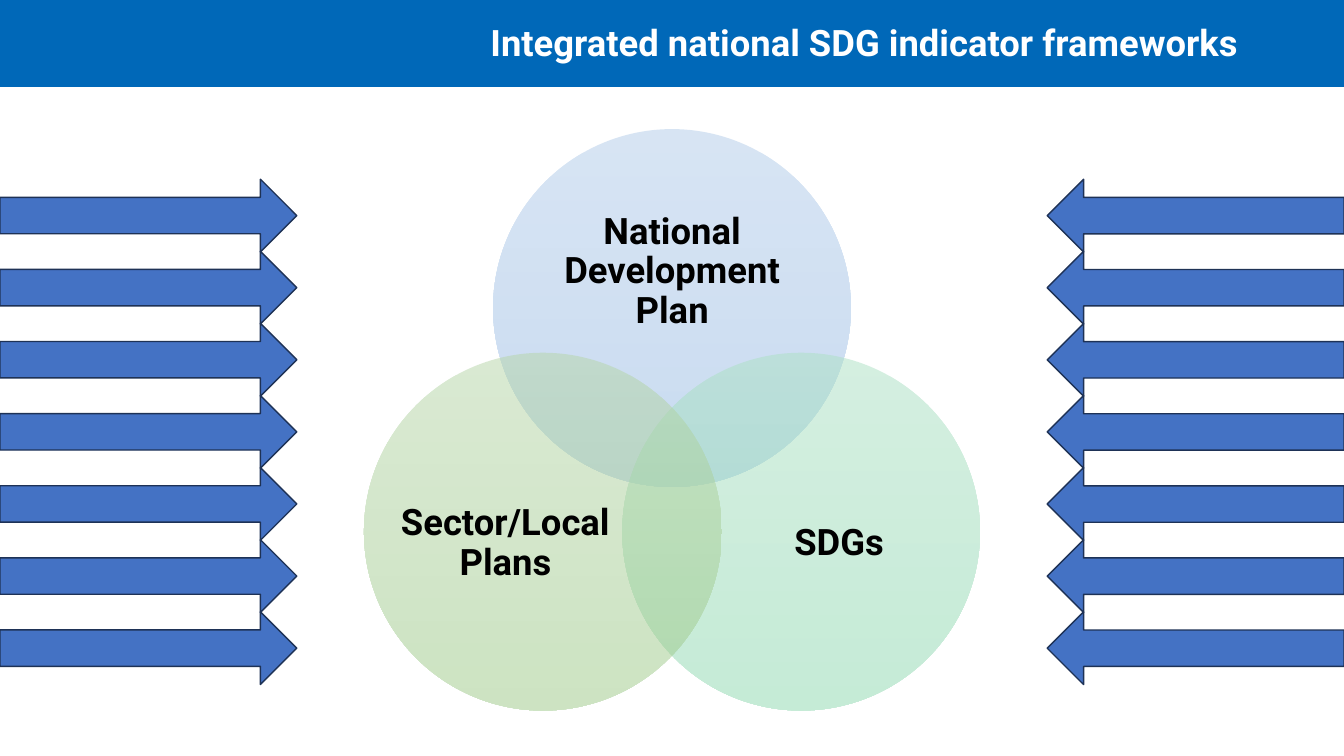
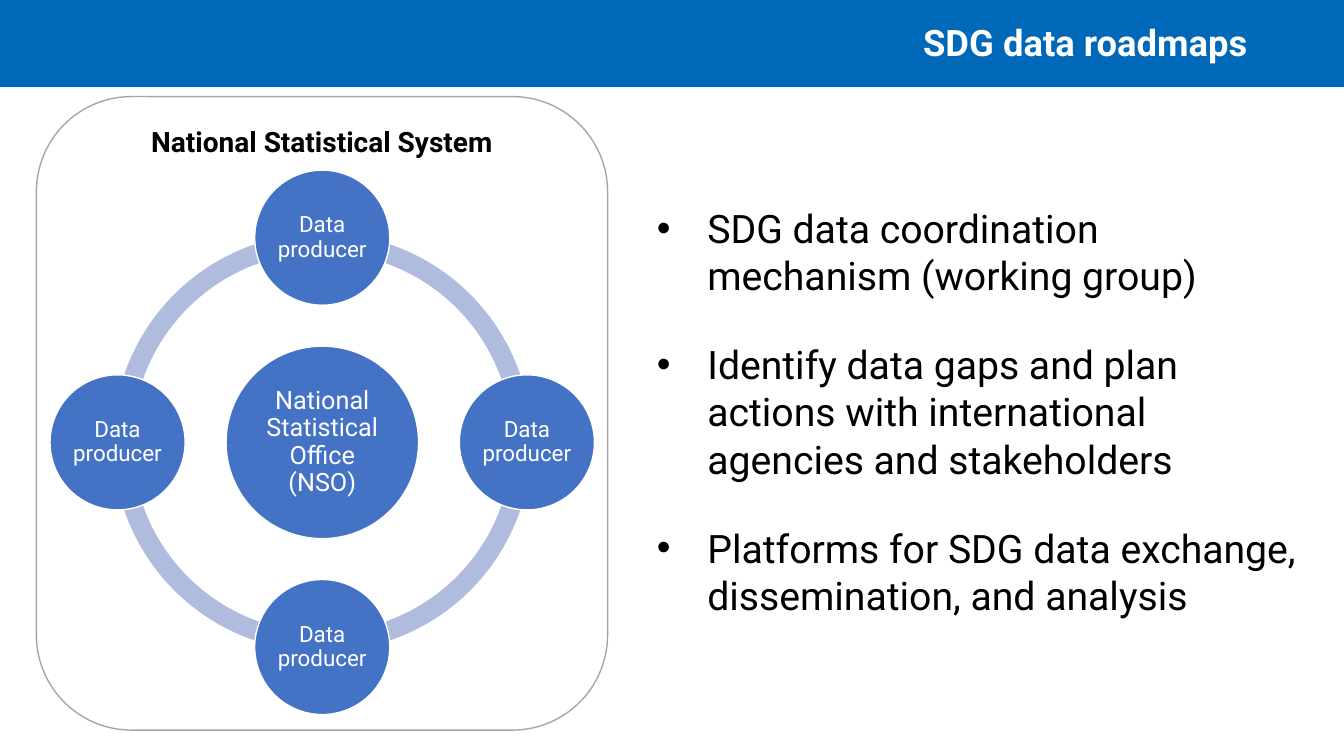
from dataclasses import dataclass
from math import cos, radians, sin

from lxml.etree import SubElement
from pptx import Presentation
from pptx.dml.color import RGBColor
from pptx.enum.shapes import MSO_SHAPE
from pptx.enum.text import MSO_ANCHOR, PP_ALIGN
from pptx.oxml.ns import qn
from pptx.shapes.autoshape import Shape
from pptx.slide import Slide
from pptx.text.text import TextFrame
from pptx.util import Pt


@dataclass(frozen=True)
class Theme:
    font: str = "Roboto"
    band: str = "0068B8"
    accent: str = "4472C4"
    arrow_edge: str = "1E3256"
    ring: str = "B0BCDE"
    frame_edge: str = "A6A6A6"
    white: str = "FFFFFF"
    black: str = "000000"
    title_size: int = 26
    heading_size: int = 20
    bullet_size: int = 28
    office_size: int = 18
    producer_size: int = 16


THEME = Theme()
PAGE_WIDTH, PAGE_HEIGHT = 960, 540


@dataclass(frozen=True)
class Box:
    left: float
    top: float
    width: float
    height: float

    @classmethod
    def around(cls, x: float, y: float, size: float) -> "Box":
        return cls(x - size / 2, y - size / 2, size, size)

    def lengths(self) -> tuple[Pt, Pt, Pt, Pt]:
        return Pt(self.left), Pt(self.top), Pt(self.width), Pt(self.height)


@dataclass(frozen=True)
class Style:
    size: int
    color: str = THEME.black
    bold: bool = False
    align: PP_ALIGN = PP_ALIGN.CENTER
    spacing: float = 1.0


TITLE = Style(THEME.title_size, THEME.white, True, PP_ALIGN.RIGHT, 0.8)
PLAN_LABEL = Style(THEME.title_size, bold=True, spacing=0.9)
HEADING = Style(THEME.heading_size, bold=True)
OFFICE = Style(THEME.office_size, THEME.white, spacing=0.9)
PRODUCER = Style(THEME.producer_size, THEME.white, spacing=0.9)
BULLET = Style(THEME.bullet_size, align=PP_ALIGN.LEFT)


@dataclass(frozen=True)
class Plan:
    text: str
    angle: float
    top_color: str
    bottom_color: str
    label: Box


PLANS = (
    Plan("National Development Plan", -90, "B1CBE9", "93B9E4", Box(386.6, 136.8, 187.2, 115.2)),
    Plan("SDGs", 30, "ABE0C3", "8CD8AF", Box(522.7, 318.2, 153.4, 140.4)),
    Plan("Sector/Local Plans", 150, "B5D5A7", "9CC987", Box(284.4, 318.2, 153.4, 140.4)),
)
ROADMAP_POINTS = (
    "SDG data coordination mechanism (working group)",
    "Identify data gaps and plan actions with international agencies and stakeholders",
    "Platforms for SDG data exchange, dissemination, and analysis",
)


# Shared drawing functions
def add_figure(page: Slide, kind: MSO_SHAPE, box: Box, fill: str, line: str | None = None) -> Shape:
    figure = page.shapes.add_shape(kind, *box.lengths())
    figure.shadow.inherit = False
    figure.fill.solid()
    figure.fill.fore_color.rgb = RGBColor.from_string(fill)
    if line:
        figure.line.color.rgb = RGBColor.from_string(line)
        figure.line.width = Pt(1)
    else:
        figure.line.fill.background()
    return figure


def set_margins(frame: TextFrame, sides: float, top: float, bottom: float) -> None:
    frame.margin_left = frame.margin_right = Pt(sides)
    frame.margin_top, frame.margin_bottom = Pt(top), Pt(bottom)


def write(frame: TextFrame, texts: tuple[str, ...], style: Style,
          anchor: MSO_ANCHOR = MSO_ANCHOR.MIDDLE, bulleted: bool = False) -> None:
    frame.word_wrap = True
    frame.vertical_anchor = anchor
    for index, text in enumerate(texts):
        para = frame.add_paragraph() if index else frame.paragraphs[0]
        if bulleted:
            add_bullet(para)
        para.alignment = style.align
        para.line_spacing = style.spacing
        span = para.add_run()
        span.text = text
        span.font.name = THEME.font
        span.font.size = Pt(style.size)
        span.font.bold = style.bold
        span.font.color.rgb = RGBColor.from_string(style.color)


def add_bullet(para) -> None:
    para.space_after = Pt(30)
    properties = para._p.get_or_add_pPr()
    properties.set("marL", str(Pt(36)))
    properties.set("indent", str(-Pt(36)))
    SubElement(properties, qn("a:buFont")).set("typeface", "Arial")
    SubElement(properties, qn("a:buChar")).set("char", "•")


def add_text(page: Slide, box: Box) -> TextFrame:
    return page.shapes.add_textbox(*box.lengths()).text_frame


def add_page(deck, title: str) -> Slide:
    page = deck.slides.add_slide(deck.slide_layouts[6])
    add_figure(page, MSO_SHAPE.RECTANGLE, Box(0, 0, PAGE_WIDTH, 62), THEME.band)
    write(add_text(page, Box(260, 16.6, 638.5, 34)), (title,), TITLE, MSO_ANCHOR.TOP)
    return page


# Slide 1: overlapping plans between two columns of arrows
def add_plan(page: Slide, plan: Plan) -> None:
    center_x, center_y, orbit, diameter = 480, 326.5, 106.5, 255.6
    angle = radians(plan.angle)
    box = Box.around(center_x + orbit * cos(angle), center_y + orbit * sin(angle), diameter)
    circle = add_figure(page, MSO_SHAPE.OVAL, box, plan.top_color)
    circle.fill.gradient()
    circle.fill.gradient_angle = 270
    for stop, color in zip(circle.fill.gradient_stops, (plan.top_color, plan.bottom_color)):
        stop.color.rgb = RGBColor.from_string(color)
    for color in circle.element.spPr.iter(qn("a:srgbClr")):
        SubElement(color, qn("a:alpha")).set("val", "50000")
    label = add_text(page, plan.label)
    set_margins(label, 0, 0, 0)
    write(label, (plan.text,), PLAN_LABEL)


def draw_frameworks(deck) -> None:
    page = add_page(deck, "Integrated national SDG indicator frameworks ")
    for plan in PLANS:
        add_plan(page, plan)
    width, height, first_top, pitch = 212, 52, 128, 51.5
    for left, rotation in ((0, 0), (PAGE_WIDTH - width, 180)):
        for row in range(7):
            box = Box(left, first_top + row * pitch, width, height)
            arrow = add_figure(page, MSO_SHAPE.RIGHT_ARROW, box, THEME.accent, THEME.arrow_edge)
            arrow.rotation = rotation


# Slide 2: statistical system and roadmap points
def add_node(page: Slide, box: Box, text: str, style: Style, margin: float) -> None:
    node = add_figure(page, MSO_SHAPE.OVAL, box, THEME.accent, THEME.white)
    set_margins(node.text_frame, margin, margin, margin)
    write(node.text_frame, (text,), style)


def draw_roadmaps(deck) -> None:
    page = add_page(deck, "SDG data roadmaps")
    system = add_figure(page, MSO_SHAPE.ROUNDED_RECTANGLE, Box(26, 69, 408, 452.5),
                        THEME.white, THEME.frame_edge)
    set_margins(system.text_frame, 7.2, 0, 3.6)
    write(system.text_frame, ("National Statistical System",), HEADING, MSO_ANCHOR.TOP)

    # Ring with the office at its hub and the producers around it
    hub_x, hub_y, orbit = 230.2, 316, 146.2
    ring = add_figure(page, MSO_SHAPE.DONUT, Box.around(hub_x, hub_y, 299), THEME.ring)
    ring.adjustments[0] = 0.046
    add_node(page, Box.around(hub_x, hub_y, 137.5), "National Statistical Office (NSO)", OFFICE, 4)
    for step_x, step_y in ((0, -1), (1, 0), (0, 1), (-1, 0)):
        box = Box.around(hub_x + step_x * orbit, hub_y + step_y * orbit, 96.5)
        add_node(page, box, "Data producer", PRODUCER, 1.5)

    points = add_text(page, Box(462.2, 142.6, 471.6, 305))
    write(points, ROADMAP_POINTS, BULLET, MSO_ANCHOR.TOP, bulleted=True)


def main() -> None:
    deck = Presentation()
    deck.slide_width, deck.slide_height = Pt(PAGE_WIDTH), Pt(PAGE_HEIGHT)
    draw_frameworks(deck)
    draw_roadmaps(deck)
    deck.save("out.pptx")


if __name__ == "__main__":
    main()
